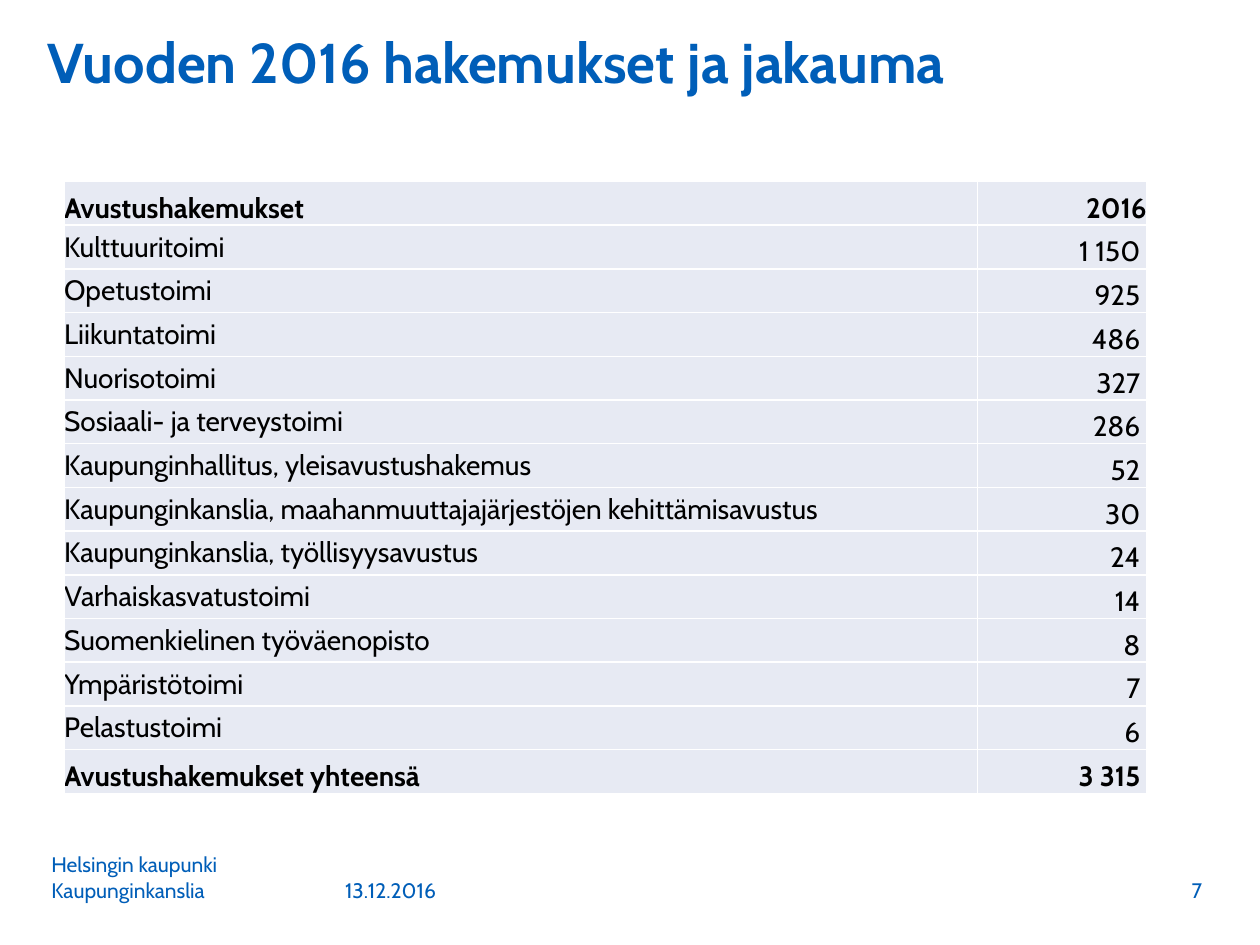
from lxml import etree
from pptx import Presentation
from pptx.dml.color import RGBColor
from pptx.enum.text import MSO_ANCHOR, PP_ALIGN
from pptx.oxml.ns import qn
from pptx.util import Inches, Pt

TOP, MIDDLE, BOTTOM = MSO_ANCHOR.TOP, MSO_ANCHOR.MIDDLE, MSO_ANCHOR.BOTTOM
LEFT, RIGHT = PP_ALIGN.LEFT, PP_ALIGN.RIGHT

# Content
TITLE = "Vuoden 2016 hakemukset ja jakauma"
HEADER = ("Avustushakemukset", "2016")
APPLICATIONS = [
    ("Kulttuuritoimi", "1 150"),
    ("Opetustoimi", "925"),
    ("Liikuntatoimi", "486"),
    ("Nuorisotoimi", "327"),
    ("Sosiaali- ja terveystoimi", "286"),
    ("Kaupunginhallitus, yleisavustushakemus", "52"),
    ("Kaupunginkanslia, maahanmuuttajajärjestöjen kehittämisavustus", "30"),
    ("Kaupunginkanslia, työllisyysavustus", "24"),
    ("Varhaiskasvatustoimi", "14"),
    ("Suomenkielinen työväenopisto", "8"),
    ("Ympäristötoimi", "7"),
    ("Pelastustoimi", "6"),
]
TOTAL = ("Avustushakemukset yhteensä", "3 315")
# Footer: text, left, top, width, height, alignment
FOOTER = [
    ("13.12.2016", 2.64, 6.82, 1.55, 0.39, LEFT),
    ("Helsingin kaupunki Kaupunginkanslia", 0.31, 6.7, 2.33, 0.51, LEFT),
    ("7", 8.46, 6.82, 1.18, 0.39, RIGHT),
]

THEME = {
    "font": "Cabin", "blue": "005EB8", "text": "000000",
    "cell": "E7EAF3", "border": "FFFFFF",
    "title_size": 32, "table_size": 16, "footer_size": 12,
}
TABLE_LEFT, TABLE_TOP = 0.51, 1.44
TABLE_HEIGHT = 4.86
COLUMN_WIDTHS = (7.25, 1.34)
NUMBER_INDENT = 0.05


def write(frame, text, size, color, bold=False, align=LEFT, anchor=BOTTOM):
    frame.word_wrap = True
    frame.vertical_anchor = anchor
    para = frame.paragraphs[0]
    para.alignment = align
    span = para.add_run()
    span.text = text
    span.font.name = THEME["font"]
    span.font.size = Pt(THEME[size])
    span.font.bold = bold
    span.font.color.rgb = RGBColor.from_string(THEME[color])
    return para


def add_borders(cell):
    properties = cell._tc.get_or_add_tcPr()
    for position, side in enumerate(("a:lnL", "a:lnR", "a:lnT", "a:lnB")):
        line = etree.Element(qn(side), w=str(Pt(1)))
        fill = etree.SubElement(line, qn("a:solidFill"))
        etree.SubElement(fill, qn("a:srgbClr"), val=THEME["border"])
        properties.insert(position, line)


deck = Presentation()
deck.slide_width, deck.slide_height = Inches(10), Inches(7.5)
page = deck.slides.add_slide(deck.slide_layouts[5])

# Title
title = page.shapes.title
title.left, title.top = Inches(0.28), Inches(0.25)
title.width, title.height = Inches(9.22), Inches(0.98)
heading = write(title.text_frame, TITLE, "title_size", "blue", True, anchor=TOP)
heading.line_spacing = 0.85

# Footer
for text, left, top, width, height, align in FOOTER:
    box = page.shapes.add_textbox(
        Inches(left), Inches(top), Inches(width), Inches(height))
    write(box.text_frame, text, "footer_size", "blue", align=align)

# Applications table
rows = [HEADER, *APPLICATIONS, TOTAL]
table = page.shapes.add_table(
    len(rows), len(COLUMN_WIDTHS), Inches(TABLE_LEFT), Inches(TABLE_TOP),
    Inches(sum(COLUMN_WIDTHS)), Inches(TABLE_HEIGHT)).table
table.horz_banding = False
for column, width in zip(table.columns, COLUMN_WIDTHS):
    column.width = Inches(width)

for row_index, row in enumerate(rows):
    bold = row in (HEADER, TOTAL)
    for column_index, text in enumerate(row):
        is_number = column_index == 1
        cell = table.cell(row_index, column_index)
        cell.margin_left = cell.margin_top = cell.margin_bottom = 0
        indented = is_number and row != HEADER
        cell.margin_right = Inches(NUMBER_INDENT if indented else 0)
        cell.fill.solid()
        cell.fill.fore_color.rgb = RGBColor.from_string(THEME["cell"])
        anchor = BOTTOM if bold or is_number else MIDDLE
        write(cell.text_frame, text, "table_size", "text", bold,
              RIGHT if is_number else LEFT)
        cell.vertical_anchor = anchor
        add_borders(cell)

deck.save("out.pptx")
